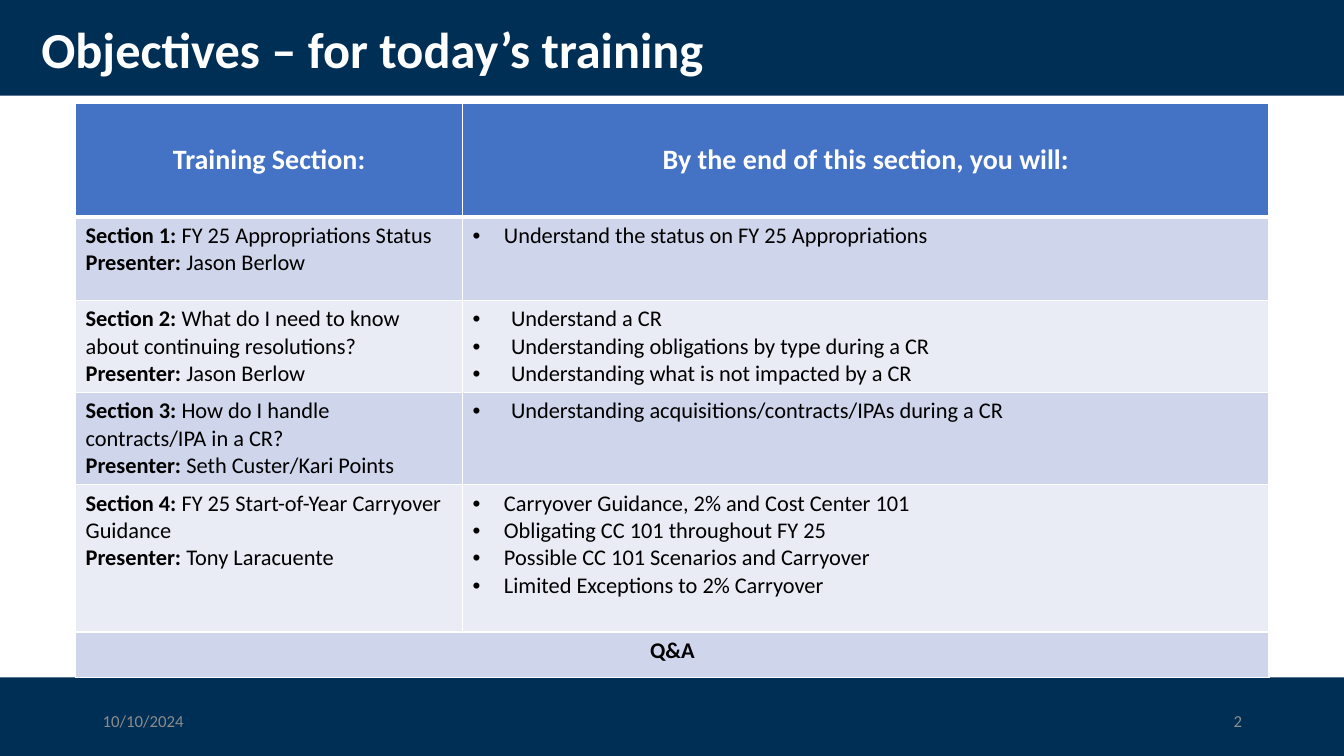
import dataclasses
import typing

import pptx
import pptx.dml.color
import pptx.enum.shapes
import pptx.enum.text
import pptx.oxml.ns
import pptx.util
from lxml import etree

ALIGN = pptx.enum.text.PP_ALIGN
MIDDLE = pptx.enum.text.MSO_ANCHOR.MIDDLE


@dataclasses.dataclass(frozen=True)
class Theme:
    """Colours, font and type sizes of the slide."""

    font: str = "Calibri"
    navy: str = "002F56"
    white: str = "FFFFFF"
    black: str = "000000"
    grey: str = "8C8C8C"
    header: str = "4472C4"
    bands: tuple = ("CFD5EA", "E9EBF5")
    title_size: int = 36
    header_size: int = 20
    body_size: int = 16
    footer_size: int = 12
    thin: int = 1
    thick: int = 3


class Box(typing.NamedTuple):
    """A region in columns and rows of the slide grid."""

    left: float
    top: float
    width: float
    height: float

    def emu(self):
        """Return the region as lengths for python-pptx."""
        return [cells(value) for value in self]


class Section(typing.NamedTuple):
    """One training section with its goals."""

    topic: str
    presenter: str
    goals: list
    indent: float
    rows: float


THEME = Theme()
COLUMNS, ROWS = 133.33, 75
HEADER_BAND = Box(0, 0, COLUMNS, 9.5)
FOOTER_BAND = Box(0, 67.2, COLUMNS, ROWS - 67.2)
AGENDA = Box(7.5, 10.3, 118.4, 56.9)
SECTION_COLUMN = 38.4
HEADER_ROWS, CLOSING_ROWS = 11.2, 4.5
HEADINGS = ["Training Section:", "By the end of this section, you will:"]
SECTIONS = [
    Section("FY 25 Appropriations Status", "Jason Berlow",
            ["Understand the status on FY 25 Appropriations"], 3.1, 8.3),
    Section("What do I need to know about continuing resolutions?", "Jason Berlow",
            ["Understand a CR",
             "Understanding obligations by type during a CR",
             "Understanding what is not impacted by a CR"], 3.8, 9.15),
    Section("How do I handle contracts/IPA in a CR?", "Seth Custer/Kari Points",
            ["Understanding acquisitions/contracts/IPAs during a CR"], 3.8, 9.15),
    Section("FY 25 Start-of-Year Carryover Guidance", "Tony Laracuente",
            ["Carryover Guidance, 2% and Cost Center 101",
             "Obligating CC 101 throughout FY 25",
             "Possible CC 101 Scenarios and Carryover",
             "Limited Exceptions to 2% Carryover"], 3.1, 14.6),
]


def cells(count):
    """Convert grid cells to a length."""
    return pptx.util.Inches(count / 10)


def rgb(code):
    """Return a colour object for a hex code."""
    return pptx.dml.color.RGBColor.from_string(code)


def add_run(paragraph, text, size, color, bold=False):
    """Append one formatted run."""
    run = paragraph.add_run()
    run.text = text
    run.font.name = THEME.font
    run.font.size = pptx.util.Pt(size)
    run.font.bold = bold
    run.font.color.rgb = rgb(color)


def next_paragraph(frame, index):
    """Return the first paragraph of a frame or a new one."""
    return frame.add_paragraph() if index else frame.paragraphs[0]


def add_bullet(paragraph, indent):
    """Give a paragraph a hanging bullet."""
    properties = paragraph._p.get_or_add_pPr()
    properties.set("marL", str(cells(indent)))
    properties.set("indent", str(-cells(indent)))
    for tag, key, value in (("a:buFont", "typeface", "Arial"), ("a:buChar", "char", "•")):
        etree.SubElement(properties, pptx.oxml.ns.qn(tag)).set(key, value)


def style_cell(cell, fill, top, bottom):
    """Set the white borders and the fill of a cell."""
    properties = cell._tc.get_or_add_tcPr()
    for side, width in (("L", THEME.thin), ("R", THEME.thin), ("T", top), ("B", bottom)):
        border = etree.SubElement(properties, pptx.oxml.ns.qn(f"a:ln{side}"))
        border.set("w", str(pptx.util.Pt(width)))
        solid = etree.SubElement(border, pptx.oxml.ns.qn("a:solidFill"))
        etree.SubElement(solid, pptx.oxml.ns.qn("a:srgbClr")).set("val", THEME.white)
    cell.fill.solid()
    cell.fill.fore_color.rgb = rgb(fill)


def add_band(slide, box):
    """Draw a navy band behind the title."""
    band = slide.shapes.add_shape(pptx.enum.shapes.MSO_SHAPE.RECTANGLE, *box.emu())
    band.shadow.inherit = False
    band.fill.solid()
    band.fill.fore_color.rgb = rgb(THEME.navy)
    band.line.fill.background()
    slide.shapes.title.element.addprevious(band.element)


def add_header(slide, box):
    """Place the title on its band."""
    add_band(slide, box)
    title = slide.shapes.title
    title.left, title.top, title.width, title.height = Box(
        box.left + 3.1, box.top + 1.8, 115, 6.8).emu()
    frame = title.text_frame
    frame.auto_size = pptx.enum.text.MSO_AUTO_SIZE.NONE
    frame.vertical_anchor = MIDDLE
    heading = frame.paragraphs[0]
    heading.alignment = ALIGN.LEFT
    heading.line_spacing = 0.9
    add_run(heading, "Objectives – for today’s training", THEME.title_size, THEME.white, True)


def fill_section(row, number, section):
    """Write a section's topic, presenter and goals into its row."""
    topic_cell, goals_cell = row.cells
    details = ((f"Section {number}: ", section.topic), ("Presenter: ", section.presenter))
    for index, (label, detail) in enumerate(details):
        line = next_paragraph(topic_cell.text_frame, index)
        add_run(line, label, THEME.body_size, THEME.black, True)
        add_run(line, detail, THEME.body_size, THEME.black)
    for index, goal in enumerate(section.goals):
        line = next_paragraph(goals_cell.text_frame, index)
        add_bullet(line, section.indent)
        add_run(line, goal, THEME.body_size, THEME.black)


def add_agenda(slide, box):
    """Build the table of training sections."""
    heights = [HEADER_ROWS, *(section.rows for section in SECTIONS), CLOSING_ROWS]
    agenda = slide.shapes.add_table(len(heights), 2, *box.emu()).table
    for column, width in zip(agenda.columns, (SECTION_COLUMN, box.width - SECTION_COLUMN)):
        column.width = cells(width)
    for index, (row, height) in enumerate(zip(agenda.rows, heights)):
        row.height = cells(height)
        fill = THEME.bands[(index - 1) % 2] if index else THEME.header
        for cell in row.cells:
            style_cell(cell, fill, THEME.thick if index == 1 else THEME.thin,
                       THEME.thin if index else THEME.thick)
    for cell, heading in zip(agenda.rows[0].cells, HEADINGS):
        cell.vertical_anchor = MIDDLE
        line = cell.text_frame.paragraphs[0]
        line.alignment = ALIGN.CENTER
        add_run(line, heading, THEME.header_size, THEME.white, True)
    for number, section in enumerate(SECTIONS, 1):
        fill_section(agenda.rows[number], number, section)
    closing = agenda.cell(len(heights) - 1, 0)
    closing.merge(agenda.cell(len(heights) - 1, 1))
    line = closing.text_frame.paragraphs[0]
    line.alignment = ALIGN.CENTER
    add_run(line, "Q&A", THEME.body_size, THEME.black, True)


def add_footer(slide, box):
    """Place the date and the slide number on the lower band."""
    add_band(slide, box)
    for text, left, alignment in (("10/10/2024", 9.2, ALIGN.LEFT), ("2", 94.2, ALIGN.RIGHT)):
        label = slide.shapes.add_textbox(*Box(box.left + left, box.top + 2.3, 30, 4).emu())
        label.text_frame.word_wrap = True
        label.text_frame.vertical_anchor = MIDDLE
        line = label.text_frame.paragraphs[0]
        line.alignment = alignment
        add_run(line, text, THEME.footer_size, THEME.grey)


def main():
    """Build and save the objectives slide."""
    deck = pptx.Presentation()
    deck.slide_width, deck.slide_height = cells(COLUMNS), cells(ROWS)
    slide = deck.slides.add_slide(deck.slide_layouts[5])
    add_header(slide, HEADER_BAND)
    add_footer(slide, FOOTER_BAND)
    add_agenda(slide, AGENDA)
    deck.save("out.pptx")


if __name__ == "__main__":
    main()
